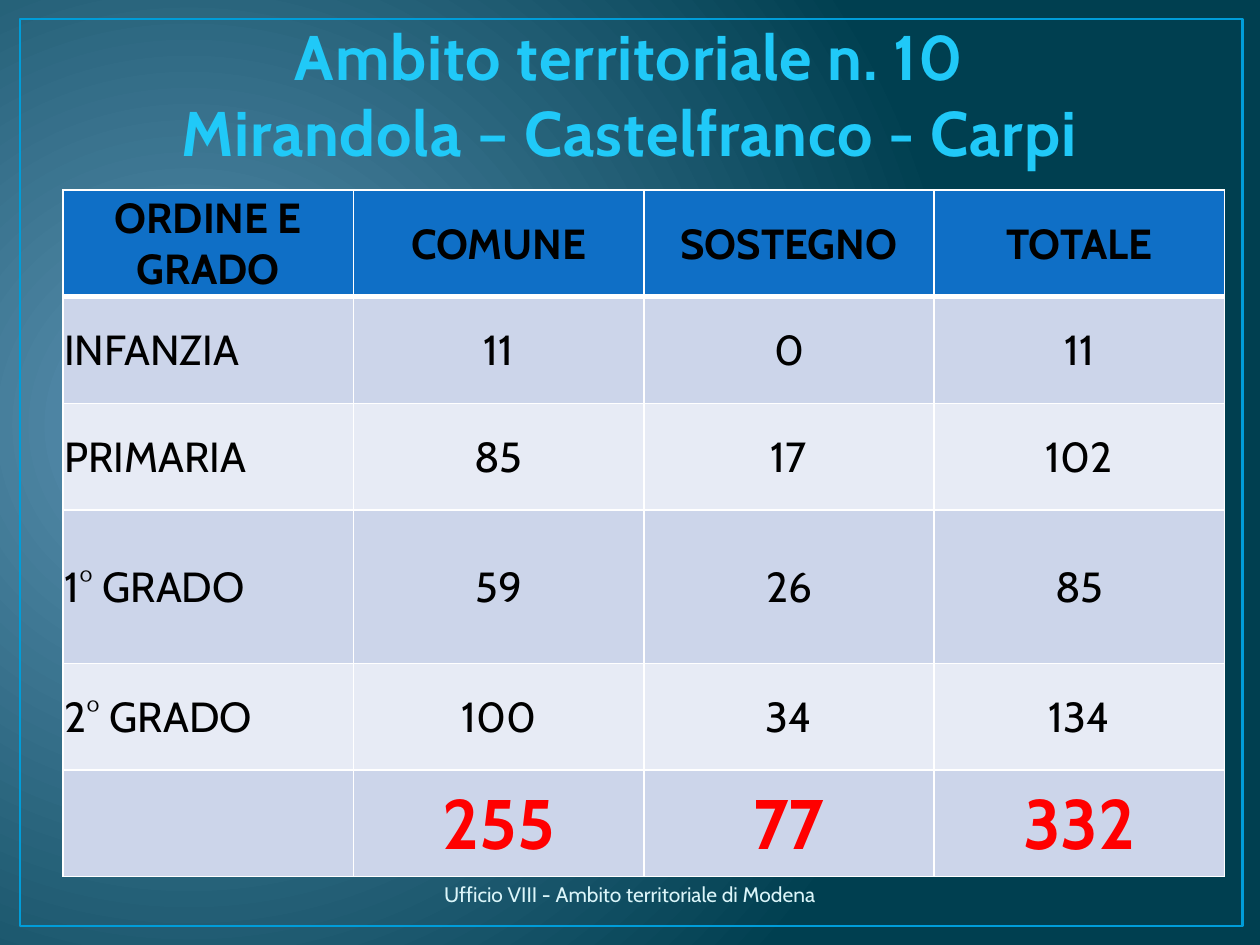
"""Build the slide with the posts of territorial area no. 10 by school level."""
from lxml.etree import SubElement
from pptx import Presentation
from pptx.dml.color import RGBColor
from pptx.enum.shapes import MSO_SHAPE as SHAPE
from pptx.enum.text import MSO_ANCHOR as ANCHOR, PP_ALIGN as ALIGN
from pptx.oxml.ns import qn
from pptx.util import Inches, Pt

TITLE = "Ambito territoriale n. 10\vMirandola – Castelfranco - Carpi"
FOOTER = "Ufficio VIII - Ambito territoriale di Modena"
ROWS = [
    ("ORDINE E GRADO", "COMUNE", "SOSTEGNO", "TOTALE"),
    ("INFANZIA", "11", "0", "11"),
    ("PRIMARIA", "85", "17", "102"),
    ("1° GRADO", "59", "26", "85"),
    ("2° GRADO", "100", "34", "134"),
    ("", "255", "77", "332"),
]
W, H = 10, 7.5
FONT = "Cabin"
COLORS = {
    "glow": "5C92B3", "deep": "003F50", "frame": "009DD9", "title": "20C9F8",
    "footer": "DBF5F9", "head": "0F6FC6", "odd": "CCD5EA", "even": "E7EBF5",
    "border": "FFFFFF", "text": "000000", "sum": "FF0000",
}
TABLE = (0.5, 1.51, 9.22, 5.45)
ROW_H, TALL_ROW, TALL_H = 0.846, 3, 1.22
FOCUS = {"l": 15, "t": 50, "r": 85, "b": 60}


def rgb(name):
    return RGBColor.from_string(COLORS[name])


def write(tf, text, size=24, color="text", bold=False, align=ALIGN.CENTER, spacing=0):
    p = tf.paragraphs[0]
    p.text = text
    p.alignment = align
    for r in p.runs:
        r.font.name, r.font.size, r.font.bold = FONT, Pt(size), bold
        r.font.color.rgb = rgb(color)
        if spacing:
            r.font._element.set("spc", str(int(spacing * 100)))


def add_text(s, box, text, anchor, **fmt):
    tf = s.shapes.add_textbox(*map(Inches, box)).text_frame
    tf.word_wrap, tf.vertical_anchor = True, anchor
    write(tf, text, **fmt)


def set_background(s):
    fill = s.background.fill
    fill.gradient()
    for stop, name in zip(fill.gradient_stops, ("glow", "deep")):
        stop.color.rgb = rgb(name)
    grad = s._element.find(".//" + qn("a:gradFill"))
    grad.remove(grad.find(qn("a:lin")))
    circle = SubElement(grad, qn("a:path"), {"path": "circle"})
    SubElement(circle, qn("a:fillToRect"), {k: str(v * 1000) for k, v in FOCUS.items()})


def set_borders(cell, top, bottom):
    tc_pr = cell._tc.get_or_add_tcPr()
    for side, width in zip("LRTB", (1, 1, top, bottom)):
        ln = SubElement(tc_pr, qn(f"a:ln{side}"), {"w": str(Pt(width))})
        solid = SubElement(ln, qn("a:solidFill"))
        SubElement(solid, qn("a:srgbClr"), {"val": COLORS["border"]})


def add_posts_table(s):
    last = len(ROWS) - 1
    table = s.shapes.add_table(len(ROWS), len(ROWS[0]), *map(Inches, TABLE)).table
    for i, values in enumerate(ROWS):
        table.rows[i].height = Inches(TALL_H if i == TALL_ROW else ROW_H)
        for j, text in enumerate(values):
            cell = table.cell(i, j)
            set_borders(cell, 3 if i == 1 else 1, 3 if i == 0 else 1)
            cell.fill.solid()
            cell.fill.fore_color.rgb = rgb("head" if i == 0 else "odd" if i % 2 else "even")
            cell.margin_left = cell.margin_right = cell.margin_top = Inches(0.01)
            cell.margin_bottom = 0
            cell.vertical_anchor = ANCHOR.MIDDLE
            write(cell.text_frame, text, size=40 if i == last else 24,
                  color="sum" if i == last else "text", bold=i in (0, last),
                  align=ALIGN.LEFT if i and j == 0 else ALIGN.CENTER)


def main():
    prs = Presentation()
    prs.slide_width, prs.slide_height = Inches(W), Inches(H)
    s = prs.slides.add_slide(prs.slide_layouts[6])
    set_background(s)
    frame = s.shapes.add_shape(SHAPE.RECTANGLE, *map(Inches, (0.16, 0.15, 9.7, 7.2)))
    frame.shadow.inherit = False
    frame.fill.background()
    frame.line.color.rgb, frame.line.width = rgb("frame"), Pt(1.5)
    add_text(s, (0.5, 0.13, 9, 1.26), TITLE, ANCHOR.BOTTOM,
             size=36, color="title", bold=True, spacing=0.5)
    add_posts_table(s)
    add_text(s, (3.1, 6.9, 3.8, 0.4), FOOTER, ANCHOR.MIDDLE, size=12, color="footer")
    prs.save("out.pptx")


if __name__ == "__main__":
    main()
